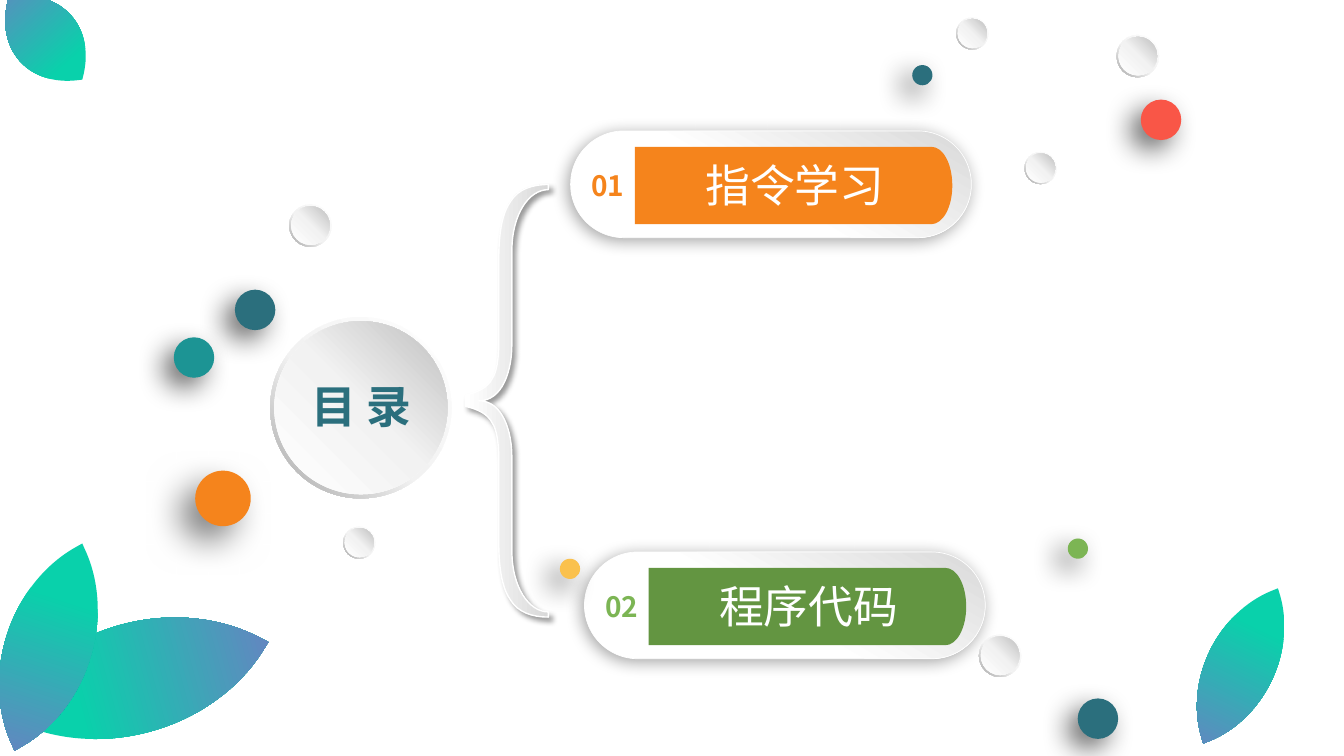
from lxml.etree import SubElement
from pptx import Presentation
from pptx.dml.color import RGBColor
from pptx.enum.shapes import MSO_SHAPE
from pptx.enum.text import MSO_ANCHOR, PP_ALIGN
from pptx.oxml.ns import qn
from pptx.util import Cm, Pt

FONT = "Noto Sans CJK SC"
COLOURS = {
    "white": "FFFFFF", "pale": "F2F2F2", "silver": "D9D9D9", "grey": "BFBFBF",
    "dark grey": "A6A6A6", "black": "000000", "orange": "F5841C",
    "moss": "639541", "green": "7CB554", "petrol": "2B6F7D", "teal": "1C9494",
    "red": "F95647", "yellow": "FAC14D", "mint": "09D1AB", "violet": "6E7DC3",
}
RIM = [(0, "white"), (55, "pale"), (100, "dark grey")]
FACE = [(0, "white"), (51, "pale"), (100, "grey")]
PILL = [(45, "white"), (100, "silver")]
BRACE = [(0, "white"), (100, "silver")]
LEAF = [(0, "mint"), (31, "mint"), (100, "violet")]


def draw_outline(points, kinds, left=0, top=0, x_scale=1, y_scale=1):
    """Draw a closed outline; each letter of kinds is L (takes one point) or C (a Bézier, takes three)."""
    corners = [(Cm(left + x * x_scale), Cm(top + y * y_scale)) for x, y in points]
    builder = page.shapes.build_freeform(*corners[0], scale=1.0)
    builder.add_line_segments(corners[1:], close=True)
    shape = builder.convert_to_shape()
    segments = iter(list(shape._element.iter(qn("a:lnTo"))))
    for kind in kinds:
        segment = next(segments)
        if kind == "C":
            segment.tag = qn("a:cubicBezTo")
            for _ in range(2):
                extra = next(segments)
                segment.append(extra[0])
                extra.getparent().remove(extra)
    return shape


def paint(shape, fill, angle=0, line=None, shadow=None):
    """Fill with a colour or gradient stops; line is (colour, width), shadow (alpha, blur, distance, angle)."""
    properties = shape._element.spPr
    if isinstance(fill, str):
        shape.fill.solid()
        shape.fill.fore_color.rgb = RGBColor.from_string(COLOURS[fill])
    else:
        gradient = SubElement(properties, qn("a:gradFill"), rotWithShape="1")
        stops = SubElement(gradient, qn("a:gsLst"))
        for position, colour in fill:
            stop = SubElement(stops, qn("a:gs"), pos=str(position * 1000))
            SubElement(stop, qn("a:srgbClr"), val=COLOURS[colour])
        SubElement(gradient, qn("a:lin"), ang=str(angle * 60000), scaled="0")
    if line:
        shape.line.color.rgb = RGBColor.from_string(COLOURS[line[0]])
        shape.line.width = Pt(line[1])
    else:
        shape.line.fill.background()
    shape.shadow.inherit = False
    if shadow:
        alpha, blur, distance, direction = shadow
        outer = SubElement(properties.find(qn("a:effectLst")), qn("a:outerShdw"),
                           blurRad=str(Pt(blur)), dist=str(Pt(distance)),
                           dir=str(direction * 60000), algn="ctr", rotWithShape="0")
        tint = SubElement(outer, qn("a:srgbClr"), val=COLOURS["black"])
        SubElement(tint, qn("a:alpha"), val=str(alpha * 1000))


deck = Presentation()
deck.slide_width, deck.slide_height = Cm(33.87), Cm(19.05)
page = deck.slides.add_slide(deck.slide_layouts[5])
shapes = page.shapes
texts = []

# Brace: the upper half is mirrored about its middle
upper = [(12.07, 0), (12.67, 0), (12.9, -0.77), (12.9, -1.41), (12.9, -3.77),
         (12.9, -4.7), (13.33, -5.32), (13.82, -5.32), (13.82, -5.45),
         (13.39, -5.45), (13.06, -5.32), (12.88, -5.04),
         (12.67, -4.76), (12.57, -4.28), (12.57, -3.57), (12.57, -1.51),
         (12.57, -1.05), (12.52, -0.72), (12.4, -0.55),
         (12.29, -0.34), (12.07, -0.22), (11.73, -0.14)]
upper_kinds = "CLCLCCLCC"
lower = [(x, -y) for x, y in reversed(upper)]
brace = draw_outline(upper + lower, upper_kinds + "L" + upper_kinds[::-1], top=10.1)
paint(brace, BRACE, 0, ("white", 1), (40, 4, 3, 45))

# Pills with their coloured tabs
tab_points = [(0, 0), (7.47, 0), (7.77, 0), (8, 0.43), (8, 0.98),
              (8, 1.51), (7.77, 1.95), (7.47, 1.95), (0, 1.95)]
chapters = [
    ("01", "指令学习", 14.38, 3.3, "orange", "orange"),
    ("02", "程序代码", 14.73, 13.91, "moss", "green"),
]
for number, label, left, top, tab_colour, number_colour in chapters:
    pill = shapes.add_shape(MSO_SHAPE.ROUNDED_RECTANGLE, Cm(left), Cm(top), Cm(10.1), Cm(2.69))
    pill.adjustments[0] = 0.5
    paint(pill, PILL, 300, ("white", 0.5), (34, 12, 3, 135))
    paint(draw_outline(tab_points, "LCCL", left + 1.62, top + 0.4), tab_colour)
    for text, dx, dy, width, height, size, colour, bold in [
        (number, 0.24, 0.81, 1.4, 1.12, 20, number_colour, True),
        (label, 2.85, 0.54, 5.61, 1.63, 32, "white", False),
    ]:
        box = shapes.add_textbox(Cm(left + dx), Cm(top + dy), Cm(width), Cm(height))
        box.text_frame.word_wrap = text == label
        texts.append((box, text, size, colour, bold))

# Leaves: the left side is the right side turned about the centre
right_side = [(0, -1), (0.16, -0.93), (0.67, -0.7), (1, -0.37), (1, 0),
              (1, 0.37), (0.67, 0.7), (0.16, 0.93)]
left_side = [(-x, -y) for x, y in right_side]
leaves = [  # left, top, width, height, rotation
    (2.01, 13.61, 2.79, 6.96, 254.8),
    (0.13, 13.56, 2.18, 5.49, 18.1),
    (30.4, 14.61, 1.73, 4.34, 25.7),
    (0.28, -0.43, 1.73, 2.79, 138.3),
]
for left, top, width, height, rotation in leaves:
    leaf = draw_outline(right_side + left_side, "LCCLLCC",
                        left + width / 2, top + height / 2, width / 2, height / 2)
    leaf.rotation = rotation
    paint(leaf, LEAF, 90)

# Raised discs: a rim with a face inside
discs = [
    (6.81, 7.99, 4.57, 0.955), (24.1, 0.44, 0.81, 0.91), (28.14, 0.88, 1.07, 0.91),
    (8.65, 13.27, 0.81, 0.91), (25.82, 3.83, 0.81, 0.91), (24.67, 15.99, 1.07, 0.91),
    (7.29, 5.15, 1.07, 0.91),
]
for left, top, size, ratio in discs:
    rim = shapes.add_shape(MSO_SHAPE.DONUT, Cm(left), Cm(top), Cm(size), Cm(size))
    rim.adjustments[0] = 0.049
    paint(rim, RIM, 135)
    inset, inner = size * (1 - ratio) / 2, size * ratio
    face = shapes.add_shape(MSO_SHAPE.OVAL, Cm(left + inset), Cm(top + inset), Cm(inner), Cm(inner))
    paint(face, FACE, 315)

dots = [
    (28.75, 2.51, 1.02, "red"), (22.99, 1.64, 0.51, "petrol"), (5.92, 7.3, 1.02, "petrol"),
    (14.11, 14.08, 0.51, "yellow"), (4.92, 11.86, 1.4, "orange"),
    (27.16, 17.6, 1.02, "petrol"), (4.38, 8.5, 1.02, "teal"), (26.91, 13.57, 0.51, "green"),
]
for left, top, size, colour in dots:
    dot = shapes.add_shape(MSO_SHAPE.OVAL, Cm(left), Cm(top), Cm(size), Cm(size))
    paint(dot, colour, shadow=(50, 25, 15, 135) if size > 1.1 else (60, 20, 10, 135))

# Title on the large disc, then all wording, in front of the shapes
title = shapes.title
title.left, title.top, title.width, title.height = Cm(7.11), Cm(9.54), Cm(3.99), Cm(1.37)
frame_format = {"margin_left": 0, "margin_right": 0, "margin_top": 0, "margin_bottom": 0,
                "vertical_anchor": MSO_ANCHOR.MIDDLE, "word_wrap": True}
for name, value in frame_format.items():
    setattr(title.text_frame, name, value)
texts.insert(0, (title, "目 录", 32, "petrol", True))

for box, text, size, colour, bold in texts:
    box._element.getparent().append(box._element)
    para = box.text_frame.paragraphs[0]
    para.alignment = PP_ALIGN.CENTER
    span = para.add_run()
    span.text = text
    for name, value in {"name": FONT, "size": Pt(size), "bold": bold}.items():
        setattr(span.font, name, value)
    span.font.color.rgb = RGBColor.from_string(COLOURS[colour])
    SubElement(span.font._element, qn("a:ea"), typeface=FONT)

deck.save("out.pptx")
